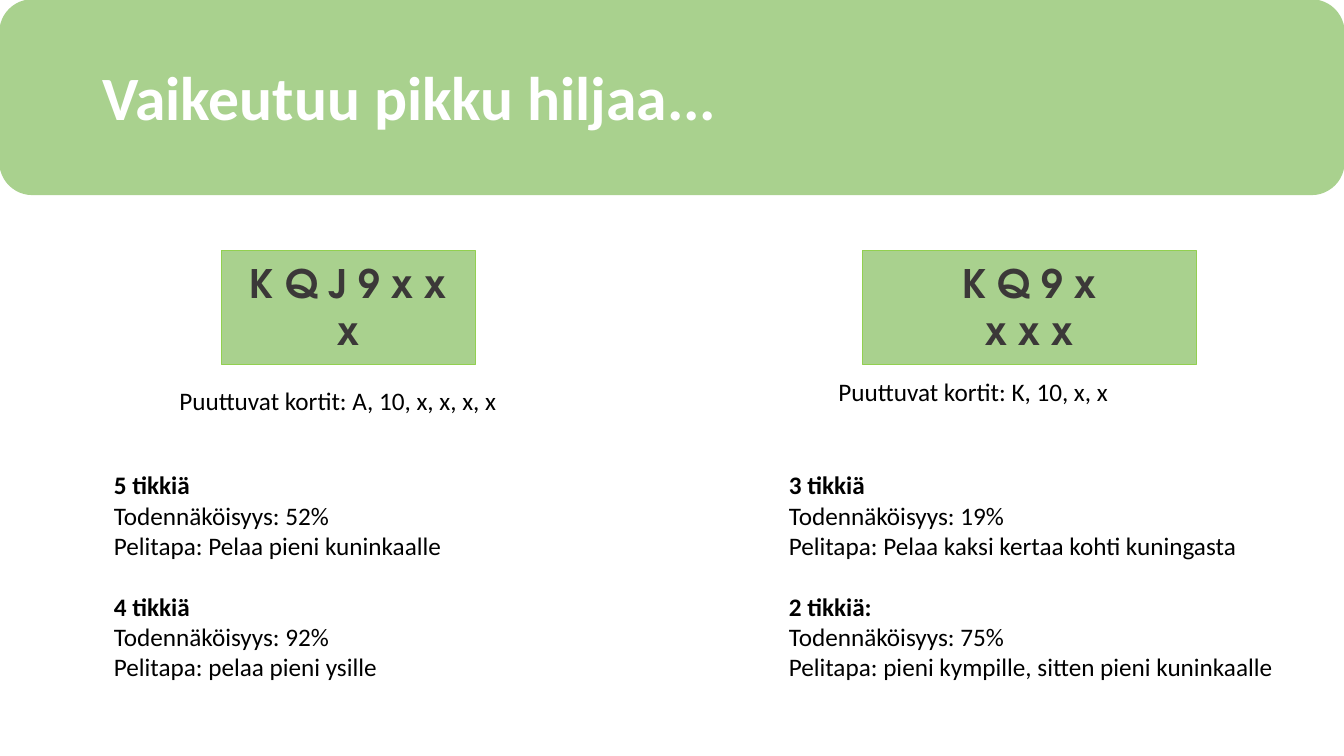
from dataclasses import dataclass

from pptx import Presentation
from pptx.dml.color import RGBColor
from pptx.enum.shapes import MSO_SHAPE
from pptx.enum.text import MSO_ANCHOR, PP_ALIGN
from pptx.util import Cm, Pt


@dataclass(frozen=True)
class Theme:
    green: RGBColor = RGBColor(0xA9, 0xD1, 0x8E)
    edge: RGBColor = RGBColor(0x92, 0xD0, 0x50)
    white: RGBColor = RGBColor(0xFF, 0xFF, 0xFF)
    black: RGBColor = RGBColor(0, 0, 0)
    ink: RGBColor = RGBColor(0x3B, 0x38, 0x38)
    text_font: str = "Calibri"
    card_font: str = "TeX Gyre Adventor"
    title_size: Pt = Pt(44)
    card_size: Pt = Pt(28)
    body_size: Pt = Pt(18)
    block_gap: Pt = Pt(22)


@dataclass(frozen=True)
class Box:
    x: float
    y: float
    w: float
    h: float

    def emu(self) -> tuple:
        return Cm(self.x), Cm(self.y), Cm(self.w), Cm(self.h)


@dataclass(frozen=True)
class Result:
    tricks: str
    chance: str
    play: str


@dataclass(frozen=True)
class Hand:
    cards: tuple[str, ...]
    card: Box
    card_text: Box
    missing: str
    missing_box: Box
    results: tuple[Result, ...]
    results_box: Box


THEME = Theme()
TITLE = dict(name=THEME.text_font, size=THEME.title_size, bold=True)
CARD = dict(name=THEME.card_font, size=THEME.card_size, bold=True)
BODY = dict(name=THEME.text_font, size=THEME.body_size, bold=False)
HEAD = BODY | dict(bold=True)

HANDS = (
    Hand(
        ("K Q J 9 x x", "x"),
        Box(5.59, 6.32, 6.4, 2.87), Box(6.02, 6.4, 5.51, 3.84),
        "A, 10, x, x, x, x", Box(4.27, 9.58, 8.99, 1.02),
        (
            Result("5 tikkiä", "52%", "Pelaa pieni kuninkaalle"),
            Result("4 tikkiä", "92%", "pelaa pieni ysille"),
        ),
        Box(2.62, 11.71, 14.3, 5.64),
    ),
    Hand(
        ("K Q 9 x", "x x x"),
        Box(21.74, 6.32, 8.41, 2.87), Box(22.33, 6.4, 7.24, 2.64),
        "K, 10, x, x", Box(20.88, 9.37, 8.41, 1.02),
        (
            Result("3 tikkiä", "19%", "Pelaa kaksi kertaa kohti kuningasta"),
            Result("2 tikkiä:", "75%", "pieni kympille, sitten pieni kuninkaalle"),
        ),
        Box(19.63, 11.71, 13.77, 5.64),
    ),
)


def write(p, text: str, fmt: dict, color: RGBColor, align=PP_ALIGN.LEFT) -> None:
    p.alignment = align
    r = p.add_run()
    r.text = text
    for key, value in fmt.items():
        setattr(r.font, key, value)
    r.font.color.rgb = color


def add_panel(shapes, kind: MSO_SHAPE, box: Box, line: RGBColor):
    sp = shapes.add_shape(kind, *box.emu())
    sp.shadow.inherit = False
    sp.fill.solid()
    sp.fill.fore_color.rgb = THEME.green
    sp.line.color.rgb = line
    sp.line.width = Pt(1)
    return sp


def add_lines(shapes, box: Box, lines: list, color: RGBColor, align=PP_ALIGN.LEFT):
    tf = shapes.add_textbox(*box.emu()).text_frame
    tf.word_wrap = True
    for i, (text, fmt) in enumerate(lines):
        p = tf.add_paragraph() if i else tf.paragraphs[0]
        write(p, text, fmt, color, align)
    return tf


def add_title(slide, text: str) -> None:
    band = add_panel(slide.shapes, MSO_SHAPE.ROUNDED_RECTANGLE,
                     Box(0, 0, 33.87, 4.9), THEME.green)
    title = slide.shapes.title
    title._element.addprevious(band._element)
    title.left, title.top, title.width, title.height = Box(2.33, 0.69, 29.21, 3.68).emu()
    tf = title.text_frame
    tf.vertical_anchor = MSO_ANCHOR.MIDDLE
    p = tf.paragraphs[0]
    p.line_spacing = 0.9
    write(p, text, TITLE, THEME.white)


def add_hand(slide, hand: Hand) -> None:
    add_lines(slide.shapes, hand.missing_box,
              [(f"Puuttuvat kortit: {hand.missing}", BODY)], THEME.black)

    lines = []
    for res in hand.results:
        lines += [
            (res.tricks, HEAD),
            (f"Todennäköisyys: {res.chance}", BODY),
            (f"Pelitapa: {res.play}", BODY),
        ]
    tf = add_lines(slide.shapes, hand.results_box, lines, THEME.black)
    for p in tf.paragraphs[3::3]:
        p.space_before = THEME.block_gap

    group = slide.shapes.add_group_shape()
    add_panel(group.shapes, MSO_SHAPE.RECTANGLE, hand.card, THEME.edge)
    add_lines(group.shapes, hand.card_text, [(row, CARD) for row in hand.cards],
              THEME.ink, PP_ALIGN.CENTER)


def main() -> None:
    prs = Presentation()
    prs.slide_width, prs.slide_height = Cm(33.87), Cm(19.05)
    slide = prs.slides.add_slide(prs.slide_layouts.get_by_name("Title Only"))
    add_title(slide, "Vaikeutuu pikku hiljaa...")
    for hand in HANDS:
        add_hand(slide, hand)
    prs.save("out.pptx")


if __name__ == "__main__":
    main()
